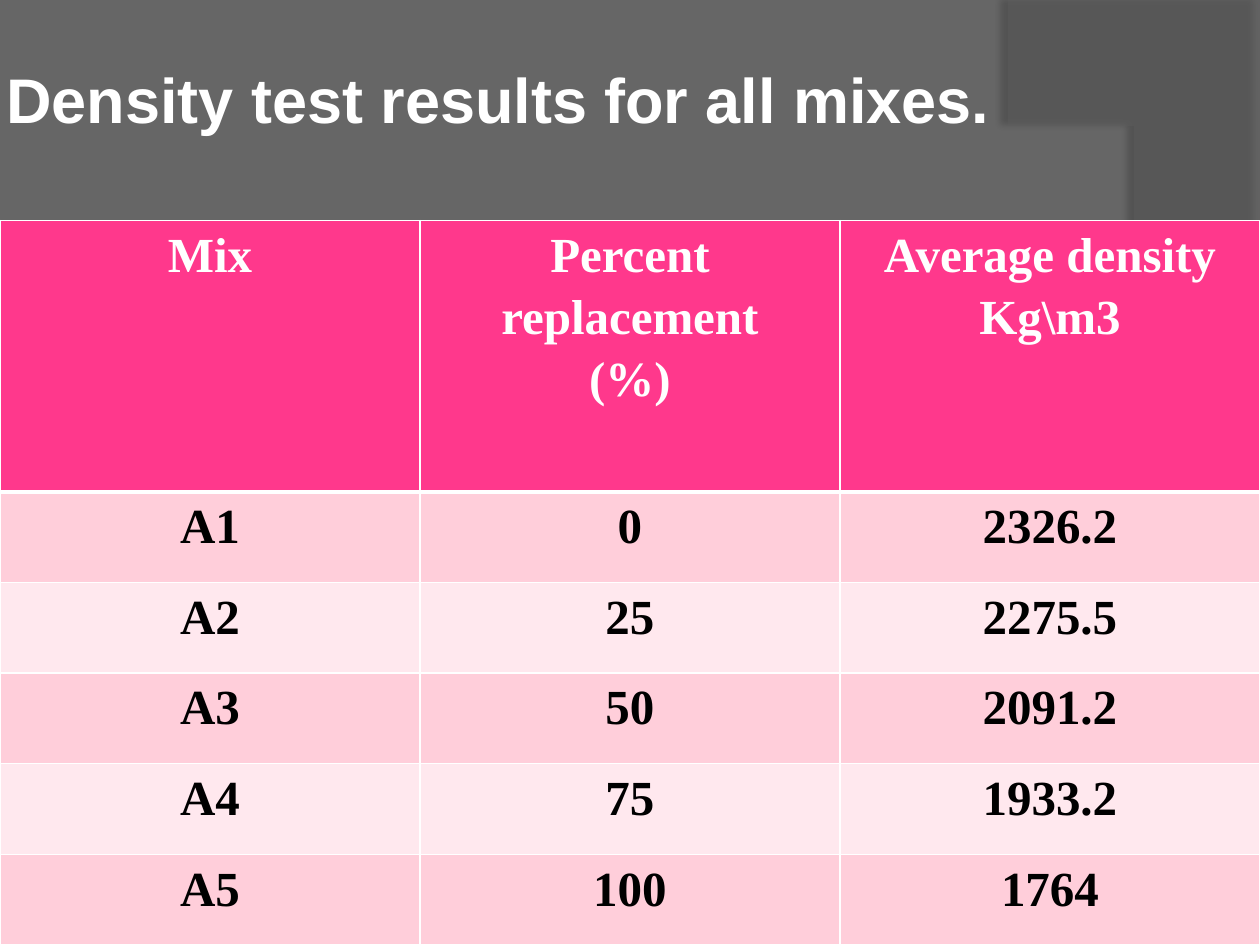
from lxml import etree
from pptx import Presentation, util as u
from pptx.dml.color import RGBColor
from pptx.enum import text
from pptx.oxml import parse_xml
from pptx.oxml.ns import nsdecls, qn

COLORS = {"back": "666666", "swoosh": "5E5E5E", "white": "FFFFFF", "black": "000000",
          "header": "FF388C", "odd": "FFCEDA", "even": "FFE8EE"}
ROWS = [
    [["Mix"], ["Percent replacement", "(%)"], ["Average density", "Kg\\m3"]],
    [["A1"], ["0"], ["2326.2"]],
    [["A2"], ["25"], ["2275.5"]],
    [["A3"], ["50"], ["2091.2"]],
    [["A4"], ["75"], ["1933.2"]],
    [["A5"], ["100"], ["1764"]],
]


def add_run(p, words, font, size, color):
    r = p.add_run()
    r.text = words
    r.font.name, r.font.size, r.font.bold = font, u.Pt(size), True
    r.font.color.rgb = RGBColor.from_string(COLORS[color])


def set_borders(cell, bottom):
    """White lines, 1 pt on each side except for the given bottom width."""
    tcPr = cell._tc.get_or_add_tcPr()
    for i, (side, width) in enumerate(zip("LRTB", (1, 1, 1, bottom))):
        tcPr.insert(i, parse_xml(
            f'<a:ln{side} {nsdecls("a")} w="{u.Pt(width)}"><a:solidFill>'
            f'<a:srgbClr val="{COLORS["white"]}"/></a:solidFill></a:ln{side}>'))


prs = Presentation()
prs.slide_width, prs.slide_height = u.Inches(10), u.Inches(7.5)
W, H = prs.slide_width, prs.slide_height
s = prs.slides.add_slide(prs.slide_layouts[5])
s.background.fill.solid()
s.background.fill.fore_color.rgb = RGBColor.from_string(COLORS["back"])

# Swoosh on the right: a Bezier edge sampled in short steps
curve = [(8.21, 7.5), (9.35, 6.19), (10.18, 3), (8, 0)]
steps = 40
edge = []
for k in range(steps + 1):
    t = k / steps
    weights = ((1 - t) ** 3, 3 * t * (1 - t) ** 2, 3 * t ** 2 * (1 - t), t ** 3)
    edge.append(tuple(sum(w * pt[axis] for w, pt in zip(weights, curve)) for axis in (0, 1)))
fb = s.shapes.build_freeform(10, 0.02, scale=u.Inches(1))
fb.add_line_segments([(10, 7.5)] + edge, close=True)
swoosh = fb.convert_to_shape()
swoosh.fill.solid()
swoosh.fill.fore_color.rgb = RGBColor.from_string(COLORS["swoosh"])
swoosh.line.fill.background()
spPr = swoosh._element.spPr
etree.SubElement(spPr.find(".//" + qn("a:srgbClr")), qn("a:alpha"), val="40000")
spPr.append(parse_xml(
    f'<a:effectLst {nsdecls("a")}><a:outerShdw blurRad="{u.Pt(4)}" dist="{u.Pt(4)}" '
    f'dir="10800000" rotWithShape="0"><a:srgbClr val="{COLORS["black"]}">'
    '<a:alpha val="45000"/></a:srgbClr></a:outerShdw></a:effectLst>'))
s.shapes._spTree.insert(2, swoosh._element)

title = s.shapes.title
title.left, title.top, title.width, title.height = 0, 0, W, u.Inches(1.56)
tf = title.text_frame
tf.vertical_anchor = text.MSO_ANCHOR.MIDDLE
tf.margin_left = tf.margin_right = tf.margin_top = tf.margin_bottom = u.Inches(0.05)
tf.paragraphs[0].alignment = text.PP_ALIGN.LEFT
add_run(tf.paragraphs[0], "Density test results for all mixes.", "Arial", 36, "white")

# The header takes three units of height, each mix takes one
top = u.Inches(1.75)
unit = (H - top) // 8
table = s.shapes.add_table(len(ROWS), 3, 0, top, W, H - top).table
for col in table.columns:
    col.width = W // 3
for i, row in enumerate(ROWS):
    header = i == 0
    table.rows[i].height = unit * (3 if header else 1)
    fill = "header" if header else ("odd" if i % 2 else "even")
    for j, lines in enumerate(row):
        cell = table.cell(i, j)
        cell.margin_left = cell.margin_right = u.Inches(0.07)
        cell.margin_top = cell.margin_bottom = 0
        cell.fill.solid()
        cell.fill.fore_color.rgb = RGBColor.from_string(COLORS[fill])
        set_borders(cell, 3 if header else 1)
        for n, words in enumerate(lines):
            tf = cell.text_frame
            p = tf.add_paragraph() if n else tf.paragraphs[0]
            p.alignment, p.line_spacing = text.PP_ALIGN.CENTER, 1.15
            add_run(p, words, "Times New Roman", 28, "white" if header else "black")

prs.save("out.pptx")
